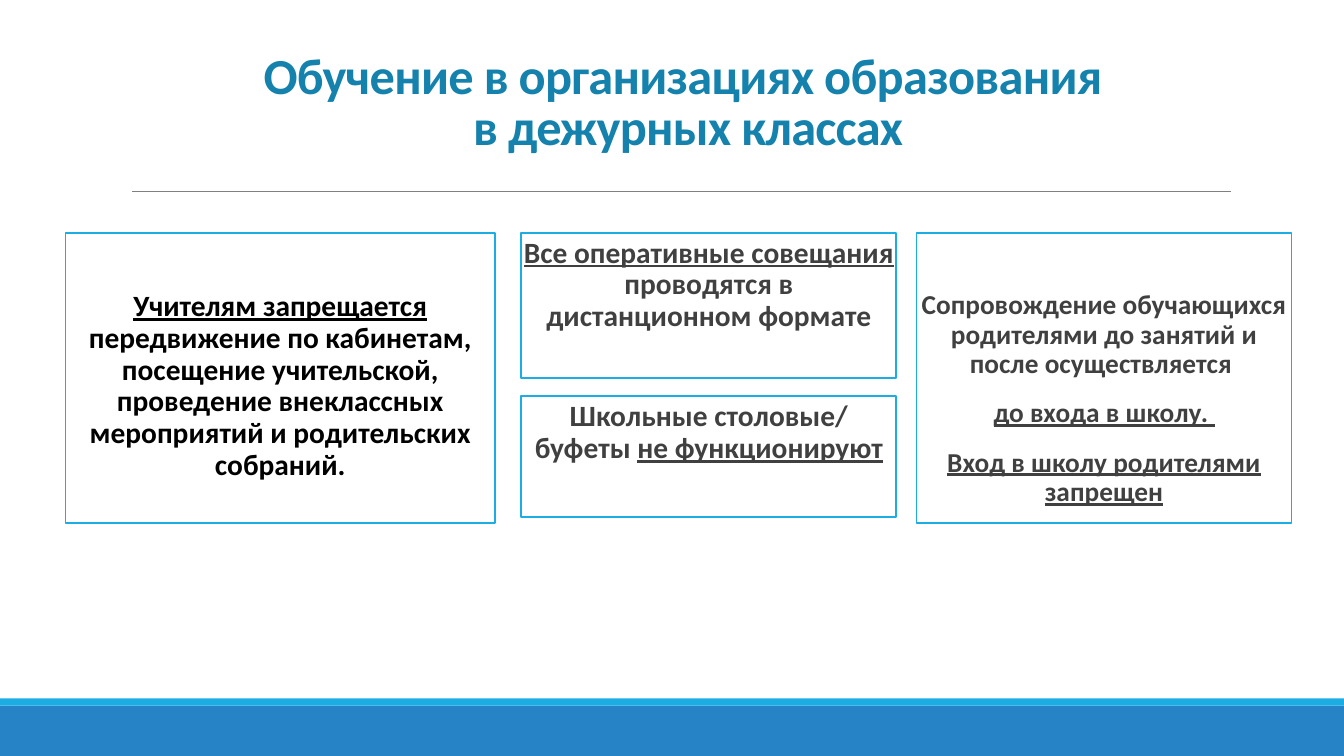
from pptx import Presentation
from pptx import util as u
from pptx.dml.color import RGBColor
from pptx.enum import shapes, text
from lxml import etree

BLUE = RGBColor(0x26, 0x83, 0xC6)
CYAN = RGBColor(0x1C, 0xAD, 0xE4)
TITLE_BLUE = RGBColor(0x14, 0x82, 0xAC)
GREY = RGBColor(0x80, 0x80, 0x80)
DARK = RGBColor(0x40, 0x40, 0x40)
BLACK = RGBColor(0, 0, 0)
WHITE = RGBColor(0xFF, 0xFF, 0xFF)
DRAWING = "http://schemas.openxmlformats.org/drawingml/2006/main"

deck = Presentation()
deck.slide_width, deck.slide_height = u.Inches(13.33), u.Inches(7.5)
slide = deck.slides.add_slide(deck.slide_layouts[1])


def place(part, left, top, width, height):
    part.left, part.top = u.Inches(left), u.Inches(top)
    part.width, part.height = u.Inches(width), u.Inches(height)


def write(frame, paragraphs, size, color, line_spacing, before=0, after=0):
    """Each paragraph is a list of (wording, underlined) runs."""
    frame.word_wrap = True
    frame.auto_size = text.MSO_AUTO_SIZE.NONE
    for index, runs in enumerate(paragraphs):
        paragraph = frame.paragraphs[0] if index == 0 else frame.add_paragraph()
        paragraph.alignment = text.PP_ALIGN.CENTER
        paragraph.line_spacing = line_spacing
        paragraph.space_before, paragraph.space_after = u.Pt(before), u.Pt(after)
        for wording, underlined in runs:
            run = paragraph.add_run()
            run.text = wording
            run.font.name, run.font.size = "Calibri", u.Pt(size)
            run.font.bold, run.font.underline = True, underlined
            run.font.color.rgb = color


# Footer bands
for top, height, color in [(7, 0.5, BLUE), (6.93, 0.07, CYAN)]:
    band = slide.shapes.add_shape(shapes.MSO_SHAPE.RECTANGLE, 0, u.Inches(top),
                                  deck.slide_width, u.Inches(height))
    band.shadow.inherit = False
    band.fill.solid()
    band.fill.fore_color.rgb = color
    band.line.fill.background()

# Title and the rule below it
title = slide.shapes.title
place(title, 0.84, 0.87, 11.97, 0.73)
title.text_frame.vertical_anchor = text.MSO_ANCHOR.BOTTOM
write(title.text_frame,
      [[("Обучение в организациях образования ", False)],
       [("в дежурных классах", False)]], 36, TITLE_BLUE, 0.85)
for paragraph in title.text_frame.paragraphs:
    for run in paragraph.runs:
        run.font._element.set("spc", "-50")

rule = slide.shapes.add_connector(shapes.MSO_CONNECTOR.STRAIGHT, u.Inches(1.31),
                                  u.Inches(1.9), u.Inches(12.21), u.Inches(1.9))
rule.line.color.rgb = GREY
rule.line.width = u.Pt(0.5)
etree.SubElement(rule._element.spPr, f"{{{DRAWING}}}effectLst")

# Rules for schools: three columns, the middle one split in two
TEACHERS, MIDDLE, PARENTS = (0.65, 4.26), (5.17, 3.72), (9.09, 3.72)
ROW_TOP, ROW_HEIGHT = 2.31, 2.88
restrictions = [
    (TEACHERS, ROW_TOP, ROW_HEIGHT, 0.58, 21, BLACK, [
        [("Учителям запрещается ", True),
         ("передвижение по кабинетам, посещение учительской, проведение "
          "внеклассных мероприятий и родительских собраний.", False)]]),
    (MIDDLE, ROW_TOP, ROW_HEIGHT / 2, 0.05, 21, DARK, [
        [("Все оперативные совещания ", True),
         ("проводятся в дистанционном формате", False)]]),
    (MIDDLE, 3.93, 1.2, 0.05, 21, DARK, [
        [("Школьные столовые/ буфеты ", False), ("не функционируют", True)]]),
    (PARENTS, ROW_TOP, ROW_HEIGHT, 0.58, 19.5, DARK, [
        [("Сопровождение обучающихся родителями до занятий и после "
          "осуществляется ", False)],
        [("до входа в школу. ", True)],
        [("Вход в школу родителями запрещен", True)]]),
]
for column, top, height, inset, size, color, paragraphs in restrictions:
    if column == TEACHERS:
        card = slide.placeholders[1]
    else:
        card = slide.shapes.add_shape(shapes.MSO_SHAPE.RECTANGLE, 0, 0, 0, 0)
        card.shadow.inherit = False
    place(card, column[0], top, column[1], height)
    card.fill.solid()
    card.fill.fore_color.rgb = WHITE
    card.line.color.rgb = CYAN
    card.line.width = u.Pt(1.25)
    frame = card.text_frame
    frame.vertical_anchor = text.MSO_ANCHOR.TOP
    frame.margin_left = frame.margin_right = 0
    frame.margin_top, frame.margin_bottom = u.Inches(inset), u.Inches(0.05)
    write(frame, paragraphs, size, color, 0.9, before=12, after=2)

# The body placeholder carries no bullet
for paragraph in slide.placeholders[1].text_frame.paragraphs:
    properties = paragraph._p.get_or_add_pPr()
    properties.set("marL", "0")
    properties.set("indent", "0")
    etree.SubElement(properties, f"{{{DRAWING}}}buNone")

deck.save("out.pptx")
